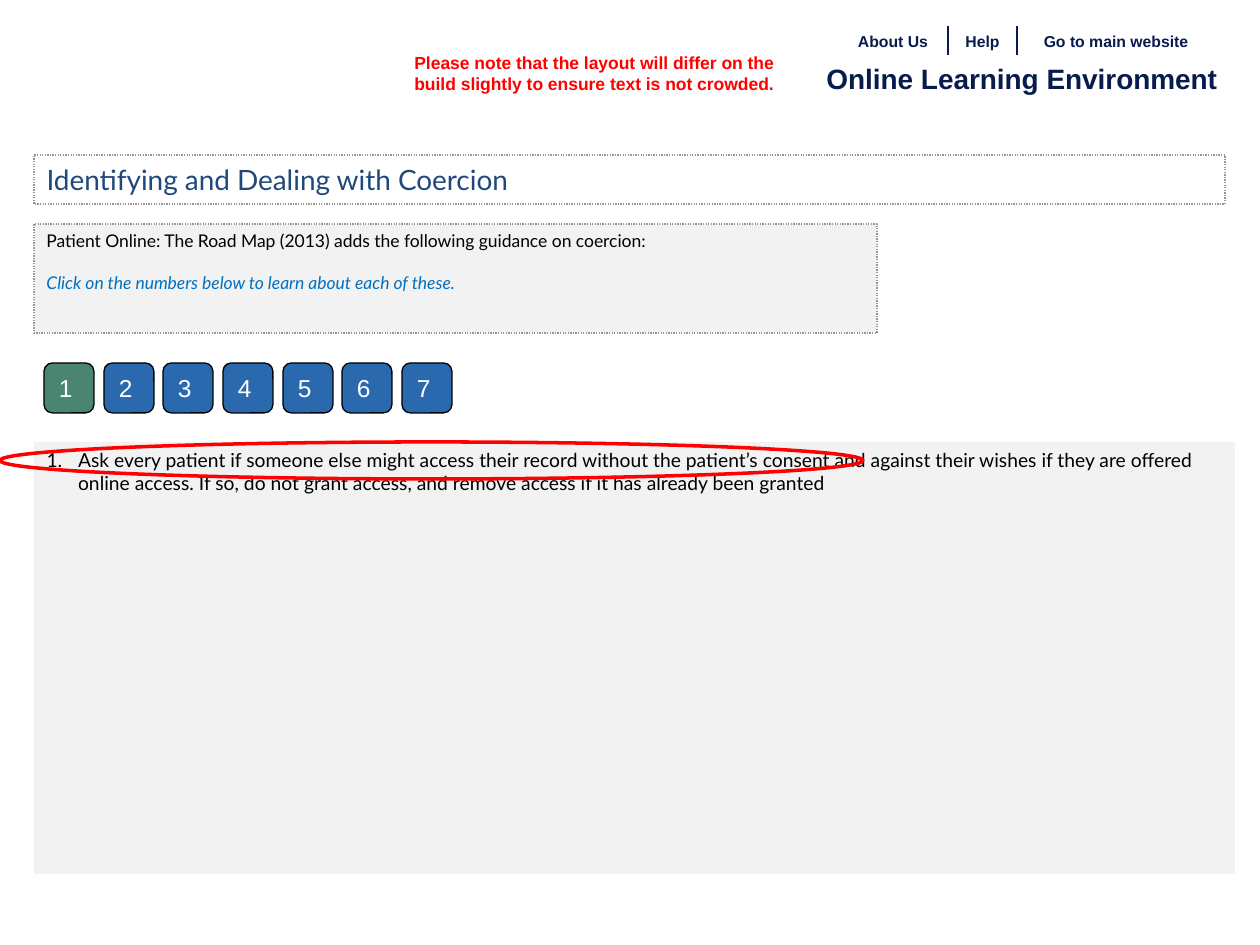
from lxml import etree
from pptx import Presentation
from pptx.dml.color import RGBColor
from pptx.enum.dml import MSO_LINE
from pptx.enum.shapes import MSO_CONNECTOR, MSO_SHAPE
from pptx.enum.text import MSO_ANCHOR, MSO_AUTO_SIZE, PP_ALIGN
from pptx.oxml.ns import qn
from pptx.util import Pt

PX = 914400 // 126
COLORS = {
    "navy": "071B4D", "panel": "F2F2F2", "border": "969696", "title": "1F497D",
    "hint": "0070C0", "active": "498571", "button": "2B69AE",
    "black": "000000", "white": "FFFFFF", "red": "FF0000",
}
RECTANGLE, ROUNDED, OVAL = MSO_SHAPE.RECTANGLE, MSO_SHAPE.ROUNDED_RECTANGLE, MSO_SHAPE.OVAL
LEFT, CENTER = PP_ALIGN.LEFT, PP_ALIGN.CENTER
TOP, MIDDLE = MSO_ANCHOR.TOP, MSO_ANCHOR.MIDDLE
STRAIGHT, DOTTED = MSO_CONNECTOR.STRAIGHT, MSO_LINE.ROUND_DOT


def color(name):
    return RGBColor.from_string(COLORS[name])


def emu(*lengths):
    return [length * PX for length in lengths]


def place(shape, box):
    shape.left, shape.top, shape.width, shape.height = emu(*box)


def outline(shape, name, width, dash=None):
    shape.line.color.rgb = color(name)
    shape.line.width = Pt(width)
    if dash is not None:
        shape.line.dash_style = dash


def prepare(shape, anchor=TOP):
    frame = shape.text_frame
    frame.word_wrap = True
    frame.auto_size = MSO_AUTO_SIZE.NONE
    frame.vertical_anchor = anchor
    return frame.paragraphs[0]


def write(paragraph, text, size, font, name, bold=False, italic=False, align=LEFT):
    paragraph.alignment = align
    run = paragraph.add_run()
    run.text = text
    run.font.size = Pt(size)
    run.font.name = font
    run.font.bold = bold
    run.font.italic = italic
    run.font.color.rgb = color(name)


def add_block(slide, kind, box, fill=None):
    shape = slide.shapes.add_shape(kind, *emu(*box))
    shape.shadow.inherit = False
    if fill:
        shape.fill.solid()
        shape.fill.fore_color.rgb = color(fill)
    else:
        shape.fill.background()
    shape.line.fill.background()
    return shape


def add_label(slide, box, text, size, name, align=LEFT):
    label = slide.shapes.add_textbox(*emu(*box))
    write(prepare(label), text, size, "Arial", name, bold=True, align=align)


def add_header(slide, box):
    left, top, width, height = box
    add_label(slide, (left, top + 29, width, 47), "Online Learning Environment", 16, "navy", CENTER)
    links = [("About Us", 39, 110), ("Help", 149, 69), ("Go to main website", 218, 198)]
    for index, (text, offset, link_width) in enumerate(links):
        add_label(slide, (left + offset, top, link_width, 32), text, 9, "navy", CENTER)
        if index:
            x = left + offset
            divider = slide.shapes.add_connector(STRAIGHT, *emu(x, top, x, top + 29))
            outline(divider, "navy", 1)
            etree.SubElement(divider.element.spPr, qn("a:effectLst"))


def add_title(slide, box):
    title = slide.shapes.title
    place(title, box)
    outline(title, "border", 0.75, DOTTED)
    write(prepare(title, MIDDLE), "Identifying and Dealing with Coercion", 16, "Lato", "title")


def add_introduction(slide, box):
    introduction = add_block(slide, RECTANGLE, box, "panel")
    outline(introduction, "border", 0.75, DOTTED)
    paragraph = prepare(introduction)
    write(paragraph, "Patient Online: The Road Map (2013) adds the following guidance on coercion:",
          10, "Lato", "black")
    hint = introduction.text_frame.add_paragraph()
    hint.space_before = Pt(12)
    write(hint, "Click on the numbers below to learn about each of these.",
          10, "Lato", "hint", italic=True)


def add_number_buttons(slide, box, count):
    left, top, width, size = box
    for index in range(count):
        offset = round(index * (width - size) / (count - 1))
        fill = "button" if index else "active"
        button = add_block(slide, ROUNDED, (left + offset, top, size, size), fill)
        outline(button, "black", 0.75)
        write(prepare(button, MIDDLE), str(index + 1), 14, "Arial", "white")


def add_guidance(slide, box):
    left, top, width, height = box
    panel = add_block(slide, RECTANGLE, box, "panel")
    body = slide.placeholders[1]
    place(body, (left, top, width, 106))
    panel.element.addnext(body.element)
    paragraph = prepare(body)
    properties = paragraph._p.get_or_add_pPr()
    properties.set("marL", "228600")
    properties.set("indent", "-228600")
    etree.SubElement(properties, qn("a:buFont"), typeface="+mj-lt")
    etree.SubElement(properties, qn("a:buAutoNum"), type="arabicPeriod")
    paragraph.space_before = Pt(0)
    write(paragraph, "Ask every patient if someone else might access their record without the "
          "patient’s consent and against their wishes if they are offered online access. "
          "If so, do not grant access, and remove access if it has already been granted",
          11, "Lato", "black")
    highlight = add_block(slide, OVAL, (0, top, 863, 37))
    outline(highlight, "red", 2)


def main():
    presentation = Presentation()
    presentation.slide_width, presentation.slide_height = emu(1260, 945)
    slide = presentation.slides.add_slide(presentation.slide_layouts[1])
    add_header(slide, (799, 26, 446, 76))
    add_title(slide, (34, 155, 1191, 49))
    add_introduction(slide, (34, 224, 843, 109))
    add_number_buttons(slide, (44, 363, 408, 50), 7)
    add_guidance(slide, (34, 442, 1201, 432))
    add_label(slide, (402, 46, 417, 55),
              "Please note that the layout will differ on the build slightly "
              "to ensure text is not crowded.", 10, "red")
    presentation.save("out.pptx")


if __name__ == "__main__":
    main()
